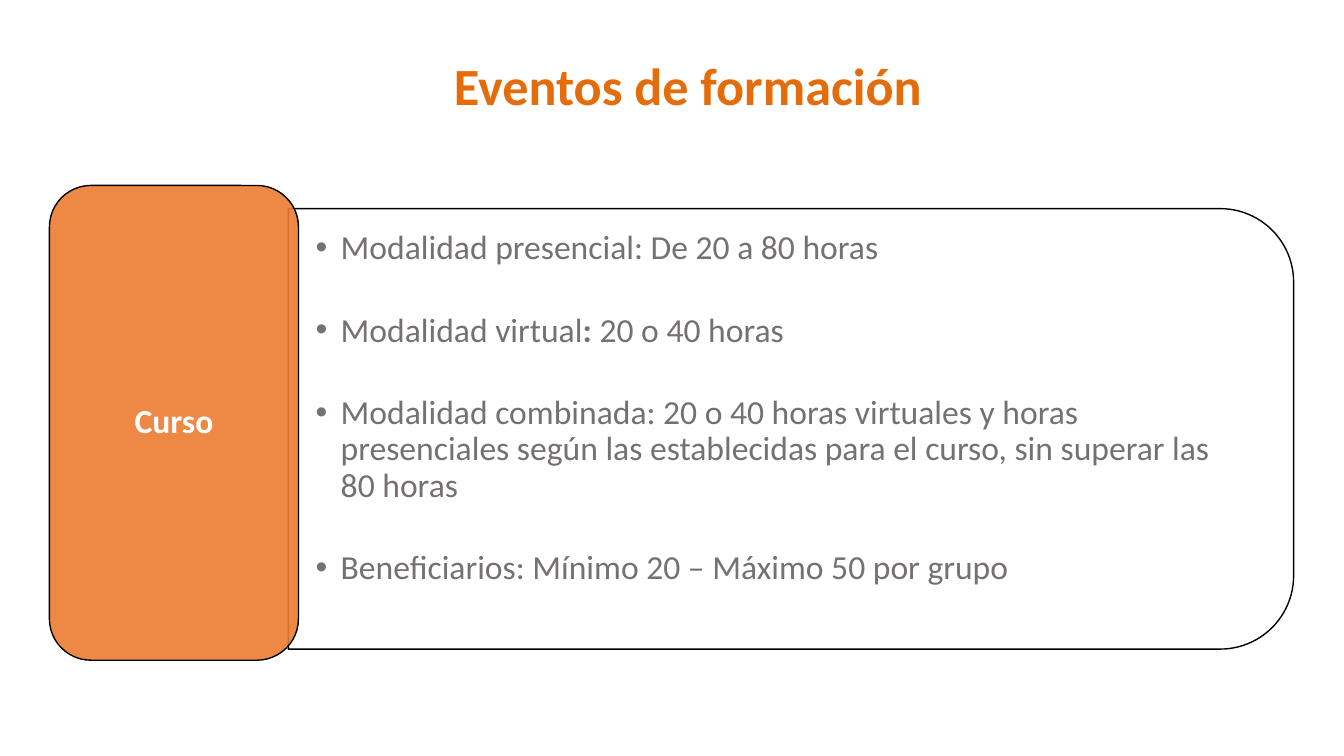
import pptx
import pptx.dml.color
import pptx.enum.shapes
import pptx.enum.text
import pptx.oxml
import pptx.oxml.ns
import pptx.util

ORANGE_TITLE = pptx.dml.color.RGBColor(0xE4, 0x6C, 0x0A)
ORANGE_TAB = pptx.dml.color.RGBColor(0xED, 0x7D, 0x31)
GREY = pptx.dml.color.RGBColor(0x76, 0x71, 0x71)
WHITE = pptx.dml.color.RGBColor(0xFF, 0xFF, 0xFF)
BLACK = pptx.dml.color.RGBColor(0, 0, 0)

WIDTH, HEIGHT = pptx.util.Inches(13.33), pptx.util.Inches(7.5)
COLUMN, ROW = WIDTH / 100, HEIGHT / 100

TITLE_BOX = (32.86, 6.27, 36.68, 9.73)
PANEL_BOX = (21.45, 27.6, 74.8, 58.27)
TAB_BOX = (3.68, 24.53, 18.53, 62.8)

COURSE_DETAILS = [
    [("Modalidad presencial: De 20 a 80 horas", False)],
    [("Modalidad virtual", False), (": ", True), ("20 o 40 horas", False)],
    [("Modalidad combinada: 20 o 40 horas virtuales y horas presenciales "
      "según las establecidas para el curso, sin superar las 80 horas", False)],
    [("Beneficiarios: Mínimo 20 – Máximo 50 por grupo", False)],
]


def place(shape, box):
    """Move a shape to a box given in columns and rows."""
    left, top, width, height = box
    shape.left, shape.top = round(left * COLUMN), round(top * ROW)
    shape.width, shape.height = round(width * COLUMN), round(height * ROW)


def prepare_frame(shape, anchor, inset_x=0.1, inset_y=0.05):
    """Set wrapping, anchor and insets and return the text frame."""
    frame = shape.text_frame
    frame.word_wrap = True
    frame.auto_size = pptx.enum.text.MSO_AUTO_SIZE.NONE
    frame.vertical_anchor = anchor
    frame.margin_left = frame.margin_right = pptx.util.Inches(inset_x)
    frame.margin_top = frame.margin_bottom = pptx.util.Inches(inset_y)
    return frame


def write(paragraph, text, size=24, color=GREY, bold=False, align=None):
    """Add a formatted run to a paragraph."""
    paragraph.alignment = align
    run = paragraph.add_run()
    run.text = text
    run.font.name = "Calibri"
    run.font.size = pptx.util.Pt(size)
    run.font.bold = bold
    run.font.color.rgb = color


def add_block(slide, preset, box, color):
    """Add an outlined, filled preset shape."""
    shape = slide.shapes.add_shape(preset, 0, 0, 0, 0)
    place(shape, box)
    shape.shadow.inherit = False
    shape.fill.solid()
    shape.fill.fore_color.rgb = color
    shape.line.color.rgb = BLACK
    shape.line.width = pptx.util.Pt(1)
    return shape


def add_title(slide, box):
    """Fill the title placeholder."""
    title = slide.shapes.title
    place(title, box)
    frame = prepare_frame(title, pptx.enum.text.MSO_ANCHOR.MIDDLE)
    write(frame.paragraphs[0], "Eventos de formación", size=37.3,
          color=ORANGE_TITLE, bold=True, align=pptx.enum.text.PP_ALIGN.CENTER)


def add_panel(slide, box):
    """Draw the panel rounded on its right side and place the list on it."""
    left, top, width, height = box
    panel = add_block(slide, pptx.enum.shapes.MSO_SHAPE.ROUND_2_SAME_RECTANGLE, box, WHITE)
    center_x, center_y = panel.left + panel.width // 2, panel.top + panel.height // 2
    panel.width, panel.height = panel.height, panel.width
    panel.left, panel.top = center_x - panel.width // 2, center_y - panel.height // 2
    panel.rotation = 90

    body = slide.placeholders[1]
    body._element.addprevious(panel._element)
    place(body, (left, top + 0.05 * height, 0.98 * width, 0.9 * height))
    frame = prepare_frame(body, pptx.enum.text.MSO_ANCHOR.TOP, inset_x=0.27, inset_y=0)
    for index, parts in enumerate(COURSE_DETAILS):
        paragraph = frame.add_paragraph() if index else frame.paragraphs[0]
        paragraph.line_spacing = 0.9
        paragraph.space_before = pptx.util.Pt(0)
        paragraph.space_after = pptx.util.Pt(33)
        properties = paragraph._p.get_or_add_pPr()
        properties.set("marL", str(pptx.util.Inches(0.25)))
        properties.set("indent", str(pptx.util.Inches(-0.25)))
        bullet = pptx.oxml.parse_xml(
            f'<a:buChar {pptx.oxml.ns.nsdecls("a")} char="•"/>')
        properties.append(bullet)
        for text, bold in parts:
            write(paragraph, text, bold=bold)


def add_tab(slide, box):
    """Draw the translucent tab with its label."""
    tab = add_block(slide, pptx.enum.shapes.MSO_SHAPE.ROUNDED_RECTANGLE, box, ORANGE_TAB)
    color = tab._element.spPr.find(pptx.oxml.ns.qn("a:solidFill"))[0]
    color.append(pptx.oxml.parse_xml(
        f'<a:alpha {pptx.oxml.ns.nsdecls("a")} val="90000"/>'))
    frame = prepare_frame(tab, pptx.enum.text.MSO_ANCHOR.MIDDLE)
    paragraph = frame.paragraphs[0]
    paragraph.line_spacing = 0.9
    write(paragraph, "Curso", color=WHITE, bold=True,
          align=pptx.enum.text.PP_ALIGN.CENTER)


def main():
    """Build and save the slide."""
    presentation = pptx.Presentation()
    presentation.slide_width, presentation.slide_height = WIDTH, HEIGHT
    slide = presentation.slides.add_slide(presentation.slide_layouts[1])
    add_title(slide, TITLE_BOX)
    add_panel(slide, PANEL_BOX)
    add_tab(slide, TAB_BOX)
    presentation.save("out.pptx")


if __name__ == "__main__":
    main()
